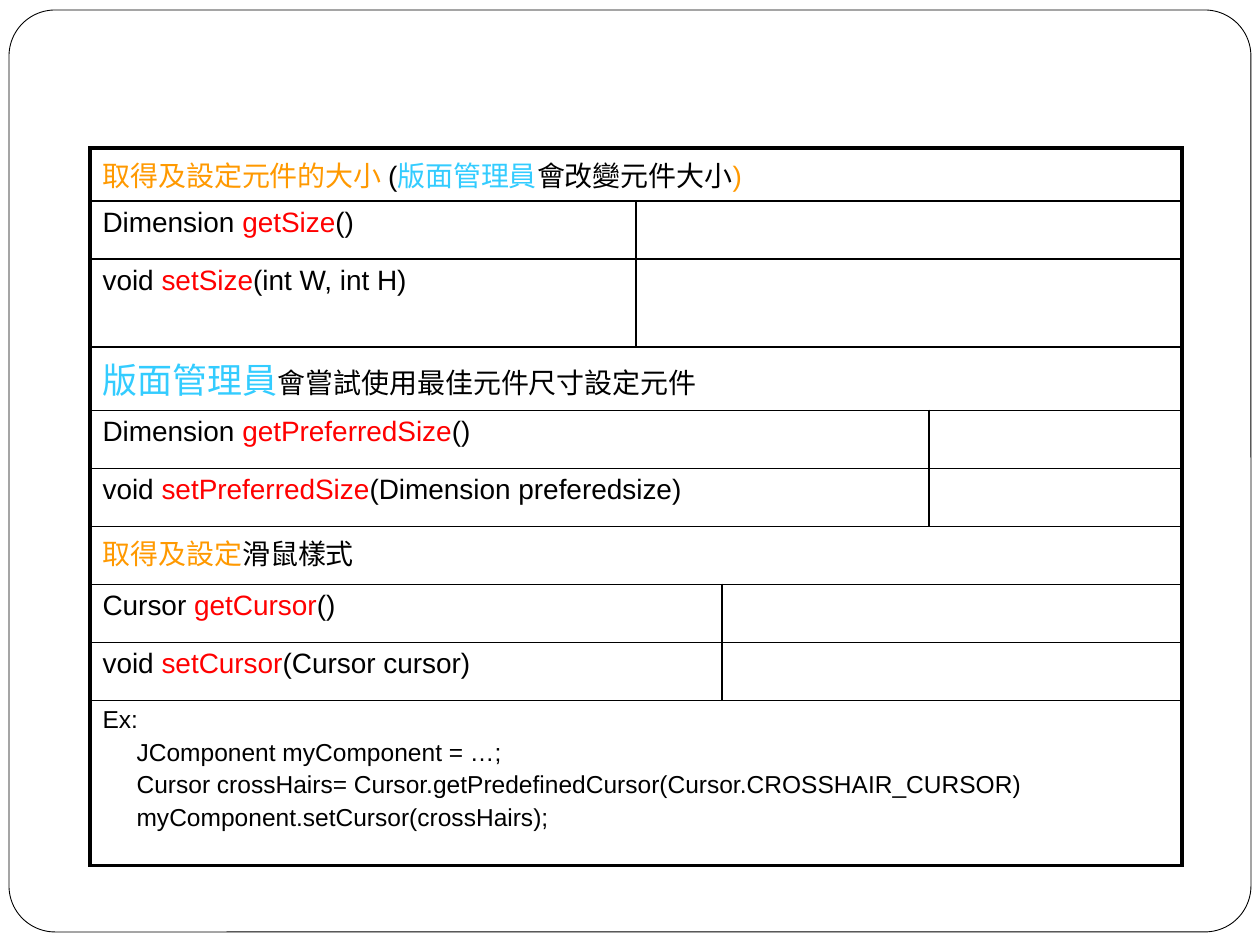
from lxml import etree
from pptx import Presentation
from pptx import util as u
from pptx.dml import color
from pptx.enum import shapes
from pptx.oxml import ns

PX = 914400 // 126
BLACK, ORANGE, CYAN, RED = "000000", "FF9900", "33CCFF", "FF0000"


def rgb(value):
    return color.RGBColor.from_string(value)


def draw_border(cell, side, width):
    line = etree.SubElement(cell._tc.get_or_add_tcPr(), ns.qn(f"a:{side}"), w=str(u.Pt(width)))
    fill = etree.SubElement(line, ns.qn("a:solidFill"))
    etree.SubElement(fill, ns.qn("a:srgbClr"), val=BLACK)


deck = Presentation()
deck.slide_width, deck.slide_height = 1260 * PX, 945 * PX
slide = deck.slides.add_slide(deck.slide_layouts[6])

frame = slide.shapes.add_shape(
    shapes.MSO_SHAPE.ROUNDED_RECTANGLE, 9 * PX, 10 * PX, 1242 * PX, 922 * PX)
frame.adjustments[0] = 0.05
frame.shadow.inherit = False
frame.fill.solid()
frame.fill.fore_color.rgb = rgb("FFFFFF")
frame.line.color.rgb = rgb(BLACK)
frame.line.width = u.Pt(0.5)

column_widths = [546, 86, 207, 253]
row_heights = [52, 58, 88, 63, 58, 58, 58, 58, 58, 165]
methods = [
    (4, [("取得及設定元件的大小 ", ORANGE, 16), ("(", BLACK, 16), ("版面管理員", CYAN, 16),
         ("會改變元件大小", BLACK, 16), (")", ORANGE, 16)]),
    (1, [("Dimension ", BLACK, 16), ("getSize", RED, 16), ("()", BLACK, 16)]),
    (1, [("void ", BLACK, 16), ("setSize", RED, 16), ("(int W, int H)", BLACK, 16)]),
    (4, [("版面管理員", CYAN, 20), ("會嘗試使用最佳元件尺寸設定元件", BLACK, 16)]),
    (3, [("Dimension ", BLACK, 16), ("getPreferredSize", RED, 16), ("()", BLACK, 16)]),
    (3, [("void ", BLACK, 16), ("setPreferredSize", RED, 16),
         ("(Dimension preferedsize)", BLACK, 16)]),
    (4, [("取得及設定", ORANGE, 16), ("滑鼠樣式", BLACK, 16)]),
    (2, [("Cursor ", BLACK, 16), ("getCursor", RED, 16), ("()", BLACK, 16)]),
    (2, [("void ", BLACK, 16), ("setCursor", RED, 16), ("(Cursor cursor)", BLACK, 16)]),
    (4, [("Ex:", BLACK, 14)]),
]
example_code = [
    "JComponent myComponent = …;",
    "Cursor crossHairs= Cursor.getPredefinedCursor(Cursor.CROSSHAIR_CURSOR)",
    "myComponent.setCursor(crossHairs);",
]

last_row, last_column = len(row_heights) - 1, len(column_widths) - 1
table = slide.shapes.add_table(
    len(row_heights), len(column_widths), 90 * PX, 148 * PX,
    sum(column_widths) * PX, sum(row_heights) * PX).table
table.first_row = table.horz_banding = False
for column, width in zip(table.columns, column_widths):
    column.width = width * PX
for row, height in zip(table.rows, row_heights):
    row.height = height * PX

for r, (span, pieces) in enumerate(methods):
    for c in range(last_column + 1):
        cell = table.cell(r, c)
        draw_border(cell, "lnL", 2.25 if c == 0 else 1)
        draw_border(cell, "lnR", 2.25 if c == last_column or span == 4 else 1)
        draw_border(cell, "lnT", 2.25 if r == 0 else 1)
        draw_border(cell, "lnB", 2.25 if r == last_row else 1)
        cell.fill.background()
    if span > 1:
        table.cell(r, 0).merge(table.cell(r, span - 1))
    if span < last_column:
        table.cell(r, span).merge(table.cell(r, last_column))
        draw_border_cell = table.cell(r, span)._tc.tcPr
        draw_border_cell.find(ns.qn("a:lnR")).set("w", str(u.Pt(2.25)))

    signature = table.cell(r, 0).text_frame
    lines = [pieces]
    if r == last_row:
        lines += [[(code, BLACK, 14)] for code in example_code]
    for i, line in enumerate(lines):
        paragraph = signature.add_paragraph() if i else signature.paragraphs[0]
        paragraph.space_before = u.Pt(line[0][2] * 0.2)
        if i:
            paragraph._p.get_or_add_pPr().set("marL", str(34 * PX))
        for words, tint, size in line:
            run = paragraph.add_run()
            run.text = words
            run.font.name = "Arial"
            run.font.size = u.Pt(size)
            run.font.color.rgb = rgb(tint)

deck.save("out.pptx")
